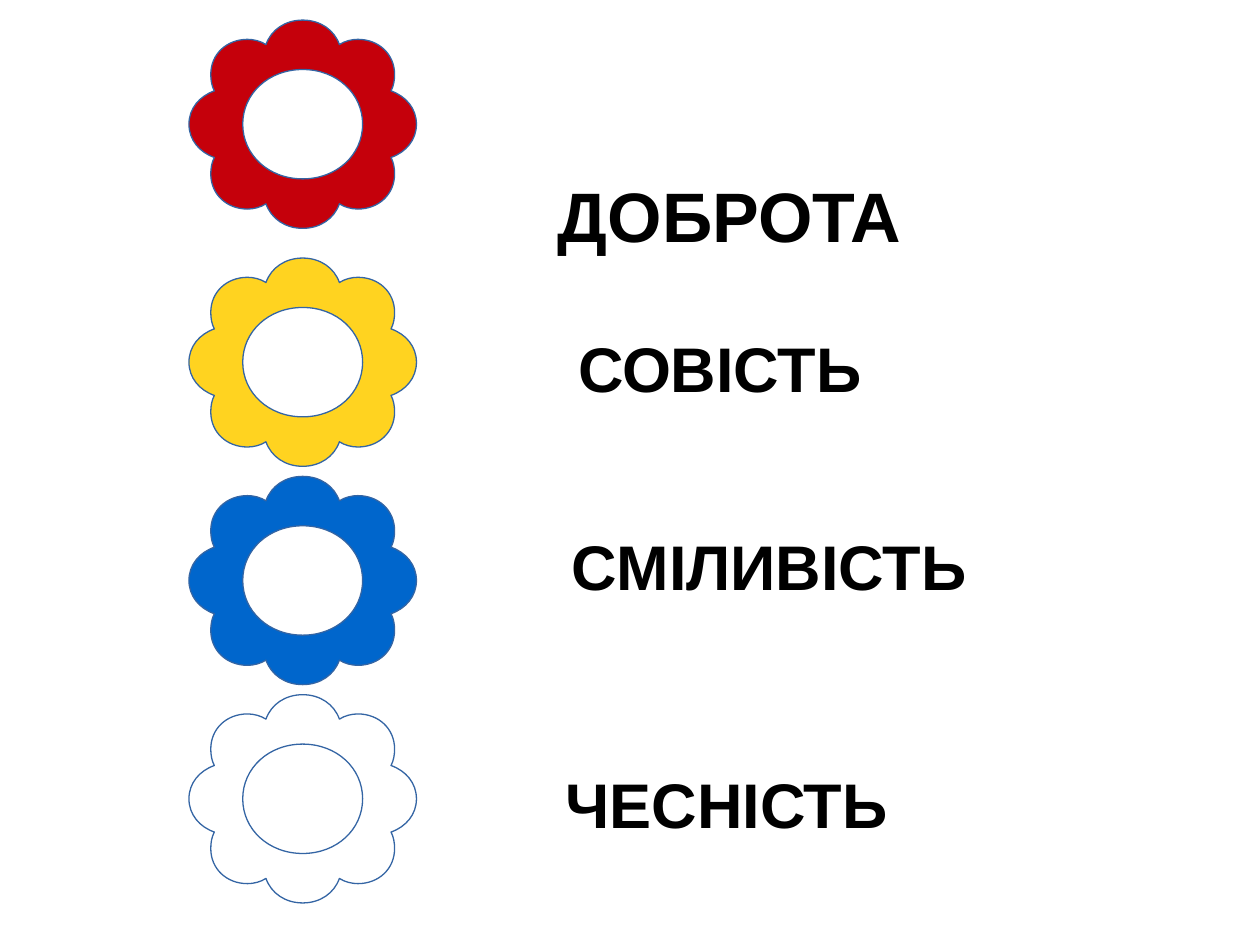
from lxml.etree import SubElement
from pptx import Presentation
from pptx.dml.color import RGBColor
from pptx.enum.text import MSO_ANCHOR
from pptx.oxml.ns import qn
from pptx.util import Pt

FONT = "Arial"
OUTLINE = "3465A4"
FLOWER_X = 173

# Upper-left quarters around the flower centre:
# a start point, then two control points and an end point per curve
PETALS = [
    (-65, 0),
    (-65, -9), (-59, -16), (-50.5, -19),
    (-52, -22), (-52.5, -25), (-52.5, -28.5),
    (-52.5, -40), (-43.5, -48.5), (-31.5, -48.5),
    (-28, -48.5), (-24, -47.5), (-21, -45.5),
    (-18, -54), (-10, -59.5), (0, -59.5),
]
HOLE = [(-34.25, 0), (-34.25, -17.5), (-19.5, -31.25), (0, -31.25)]

# Flower centre y and fill
FLOWERS = [(71, "C5000B"), (207, "FFD320"), (331.75, "0066CC"), (456.5, "FFFFFF")]

# Word, left, top, width, height, size
WORDS = [
    ("ДОБРОТА", 311.75, 91.5, 216.75, 60, 40),
    ("СОВІСТЬ", 323.25, 181.5, 193.75, 80, 36),
    ("СМІЛИВІСТЬ", 319.75, 294.5, 264.25, 52, 36),
    ("ЧЕСНІСТЬ", 316, 430.5, 198.75, 48, 36),
]


def color(hex_value):
    return RGBColor.from_string(hex_value)


def contour(quarter):
    """Mirror a quarter outline into a full closed one."""
    top = quarter + [(-x, y) for x, y in quarter[-2::-1]]
    return top + [(-x, -y) for x, y in top[1:]]


def curve_segments(sp):
    """Turn every three line segments into one cubic curve."""
    lines = list(sp._element.iter(qn("a:lnTo")))
    for i in range(0, len(lines), 3):
        group = lines[i:i + 3]
        path = group[0].getparent()
        curve = SubElement(path, qn("a:cubicBezTo"))
        group[0].addprevious(curve)
        for line in group:
            curve.append(line[0])
            path.remove(line)


def add_flower(slide, center_y, fill):
    def place(points):
        return [(Pt(FLOWER_X + x), Pt(center_y + y)) for x, y in points]

    petals = place(contour(PETALS))
    hole = place(contour(HOLE)[::-1])
    builder = slide.shapes.build_freeform(*petals[0])
    builder.add_line_segments(petals[1:], close=True)
    builder.move_to(*hole[0])
    builder.add_line_segments(hole[1:], close=True)
    sp = builder.convert_to_shape()
    curve_segments(sp)
    sp.shadow.inherit = False
    sp.fill.solid()
    sp.fill.fore_color.rgb = color(fill)
    sp.line.color.rgb = color(OUTLINE)
    sp.line.width = Pt(0.75)


def add_text(slide, text, left, top, width, height, *, size, bold=True, fill="000000"):
    sp = slide.shapes.add_textbox(Pt(left), Pt(top), Pt(width), Pt(height))
    tf = sp.text_frame
    tf.word_wrap = True
    tf.vertical_anchor = MSO_ANCHOR.TOP
    tf.margin_top = Pt(7)
    r = tf.paragraphs[0].add_run()
    r.text = text
    r.font.name = FONT
    r.font.size = Pt(size)
    r.font.bold = bold
    r.font.color.rgb = color(fill)


def main():
    prs = Presentation()
    prs.slide_width, prs.slide_height = Pt(720), Pt(540)
    s = prs.slides.add_slide(prs.slide_layouts[6])

    # Words on the right
    for text, left, top, width, height, size in WORDS:
        add_text(s, text, left, top, width, height, size=size)

    # Column of flowers on the left
    for center_y, fill in FLOWERS:
        add_flower(s, center_y, fill)

    prs.save("out.pptx")


if __name__ == "__main__":
    main()
